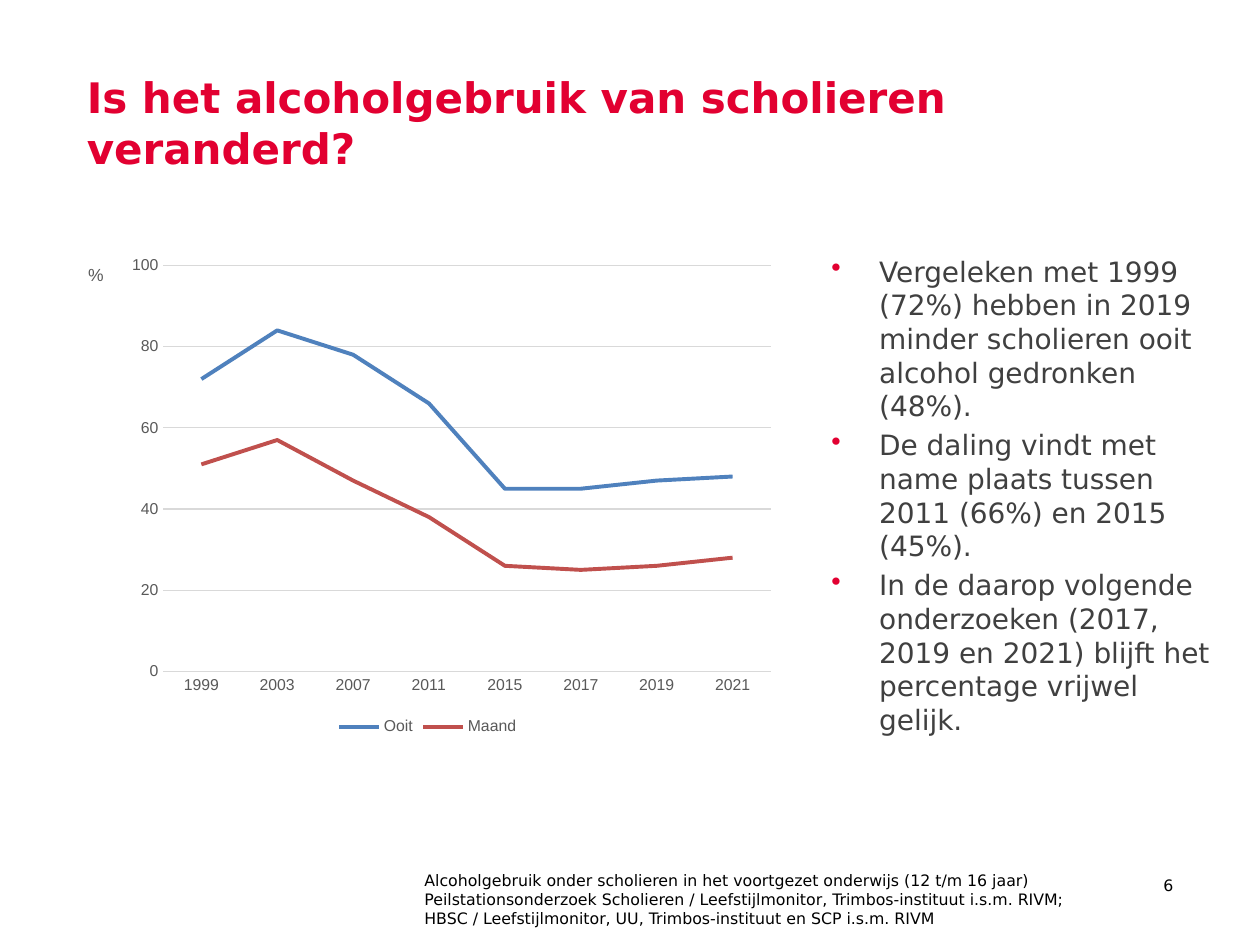
import pptx
import pptx.chart.data
import pptx.dml.color
import pptx.enum.chart
import pptx.enum.text
import pptx.oxml
import pptx.oxml.ns
import pptx.util
from pptx.util import Inches

RGBColor = pptx.dml.color.RGBColor
Pt = pptx.util.Pt
qn = pptx.oxml.ns.qn
Align = pptx.enum.text.PP_ALIGN
Chart = pptx.enum.chart

RED = RGBColor(0xE2, 0x00, 0x31)
BLACK = RGBColor(0x00, 0x00, 0x00)
DARK = RGBColor(0x40, 0x40, 0x40)
GREY = RGBColor(0x59, 0x59, 0x59)
PALE = RGBColor(0xD9, 0xD9, 0xD9)
BLUE = RGBColor(0x4F, 0x81, 0xBD)
BRICK = RGBColor(0xC0, 0x50, 0x4D)

SANS = "DejaVu Sans"
HEAD = {"name": SANS, "size": Pt(24), "bold": True}
BODY = {"name": SANS, "size": Pt(16)}
SMALL = {"name": SANS, "size": Pt(9)}
LABEL = {"name": "Arial", "size": Pt(9), "bold": False}

YEARS = ["1999", "2003", "2007", "2011", "2015", "2017", "2019", "2021"]
LINES = [
    ("Ooit", BLUE, [72, 84, 78, 66, 45, 45, 47, 48]),
    ("Maand", BRICK, [51, 57, 47, 38, 26, 25, 26, 28]),
]
POINTS = [
    "Vergeleken met 1999 (72%) hebben in 2019 minder scholieren ooit "
    "alcohol gedronken (48%).",
    "De daling vindt met name plaats tussen 2011 (66%) en 2015 (45%).",
    "In de daarop volgende onderzoeken (2017, 2019 en 2021) blijft het "
    "percentage vrijwel gelijk.",
]
SOURCE = [
    "Alcoholgebruik onder scholieren in het voortgezet onderwijs (12 t/m 16 jaar)",
    "Peilstationsonderzoek Scholieren / Leefstijlmonitor, Trimbos-instituut i.s.m. RIVM;",
    "HBSC / Leefstijlmonitor, UU, Trimbos-instituut en SCP i.s.m. RIVM",
]


def style(font, form, color):
    for key, value in form.items():
        setattr(font, key, value)
    font.color.rgb = color


def add_text(slide, box, lines, form, color, align=Align.LEFT):
    frame = slide.shapes.add_textbox(*map(Inches, box)).text_frame
    frame.word_wrap = True
    for i, line in enumerate(lines):
        para = frame.paragraphs[0] if i == 0 else frame.add_paragraph()
        para.alignment = align
        run = para.add_run()
        run.text = line
        style(run.font, form, color)
    return frame


def add_points(slide, box):
    frame = add_text(slide, box, POINTS, BODY, DARK)
    for i, para in enumerate(frame.paragraphs):
        # Red bullet with a hanging indent
        props = para._p.get_or_add_pPr()
        props.set("marL", str(Inches(0.38)))
        props.set("indent", str(-Inches(0.38)))
        tint = props.makeelement(qn("a:buClr"), {})
        tint.append(tint.makeelement(qn("a:srgbClr"), {"val": str(RED)}))
        props.append(tint)
        props.append(props.makeelement(qn("a:buChar"), {"char": "•"}))
        para.space_before = Pt(3.2 if i else 0)


def set_place(owner, index, **sides):
    """Give a chart part a fixed place, in shares of the chart."""
    for old in owner.findall(qn("c:layout")):
        owner.remove(old)
    place = owner.makeelement(qn("c:layout"), {})
    manual = place.makeelement(qn("c:manualLayout"), {})
    place.append(manual)
    marks = {"xMode": "edge", "yMode": "edge", **sides}
    if "w" in sides:
        marks = {"layoutTarget": "inner", **marks}
    for key, value in marks.items():
        manual.append(manual.makeelement(qn("c:" + key), {"val": str(value)}))
    owner.insert(index, place)


def add_trend(slide, box):
    data = pptx.chart.data.CategoryChartData(number_format="0")
    data.categories = YEARS
    for name, _, values in LINES:
        data.add_series(name, values)
    chart = slide.shapes.add_chart(
        Chart.XL_CHART_TYPE.LINE, *map(Inches, box), data).chart
    style(chart.font, {"name": "Arial", "size": Pt(10)}, BLACK)
    chart.has_title = False
    plot = chart.plots[0]
    plot.vary_by_categories = False
    for series, (_, color, _) in zip(plot.series, LINES):
        series.smooth = False
        series.format.line.color.rgb = color
        series.format.line.width = Pt(2.25)

    # Axes
    years, share = chart.category_axis, chart.value_axis
    for axis in (years, share):
        axis.major_tick_mark = axis.minor_tick_mark = Chart.XL_TICK_MARK.NONE
        style(axis.tick_labels.font, LABEL, GREY)
    formats = {"minimum_scale": 0, "maximum_scale": 100, "major_unit": 20,
               "has_major_gridlines": True}
    for key, value in formats.items():
        setattr(share, key, value)
    share.tick_labels.number_format = "0"
    share.tick_labels.number_format_is_linked = False
    share.format.line.fill.background()
    for part in (years, share.major_gridlines):
        part.format.line.color.rgb = PALE
        part.format.line.width = Pt(0.75)

    # Upright unit sign beside the top of the scale
    unit = share.axis_title
    frame = unit.text_frame
    frame.text = "%"
    style(frame.paragraphs[0].runs[0].font, {**LABEL, "size": Pt(10)}, GREY)
    turn = frame._txBody.find(qn("a:bodyPr"))
    turn.set("rot", "0")
    turn.set("vert", "horz")
    set_place(unit._element, 1, x=0.02, y=0.03)
    set_place(chart._chartSpace.chart.plotArea, 0,
              x=0.13, y=0.04, w=0.85, h=0.82)

    # Legend
    chart.has_legend = True
    chart.legend.position = Chart.XL_LEGEND_POSITION.BOTTOM
    chart.legend.include_in_layout = False
    style(chart.legend.font, LABEL, GREY)


def main():
    deck = pptx.Presentation()
    deck.slide_width, deck.slide_height = Inches(10), Inches(7.5)
    slide = deck.slides.add_slide(deck.slide_layouts[6])
    add_text(slide, (3.27, 6.86, 5.67, 0.51), SOURCE, SMALL, BLACK)
    add_text(slide, (8.62, 6.9, 0.79, 0.4), ["6"], SMALL, BLACK, Align.RIGHT)
    add_text(slide, (0.59, 0.52, 8.82, 1.26),
             ["Is het alcoholgebruik van scholieren veranderd?"], HEAD, RED)
    add_points(slide, (6.5, 1.97, 3.23, 4.68))
    add_trend(slide, (0.56, 1.95, 5.67, 3.93))
    deck.save("out.pptx")


if __name__ == "__main__":
    main()
